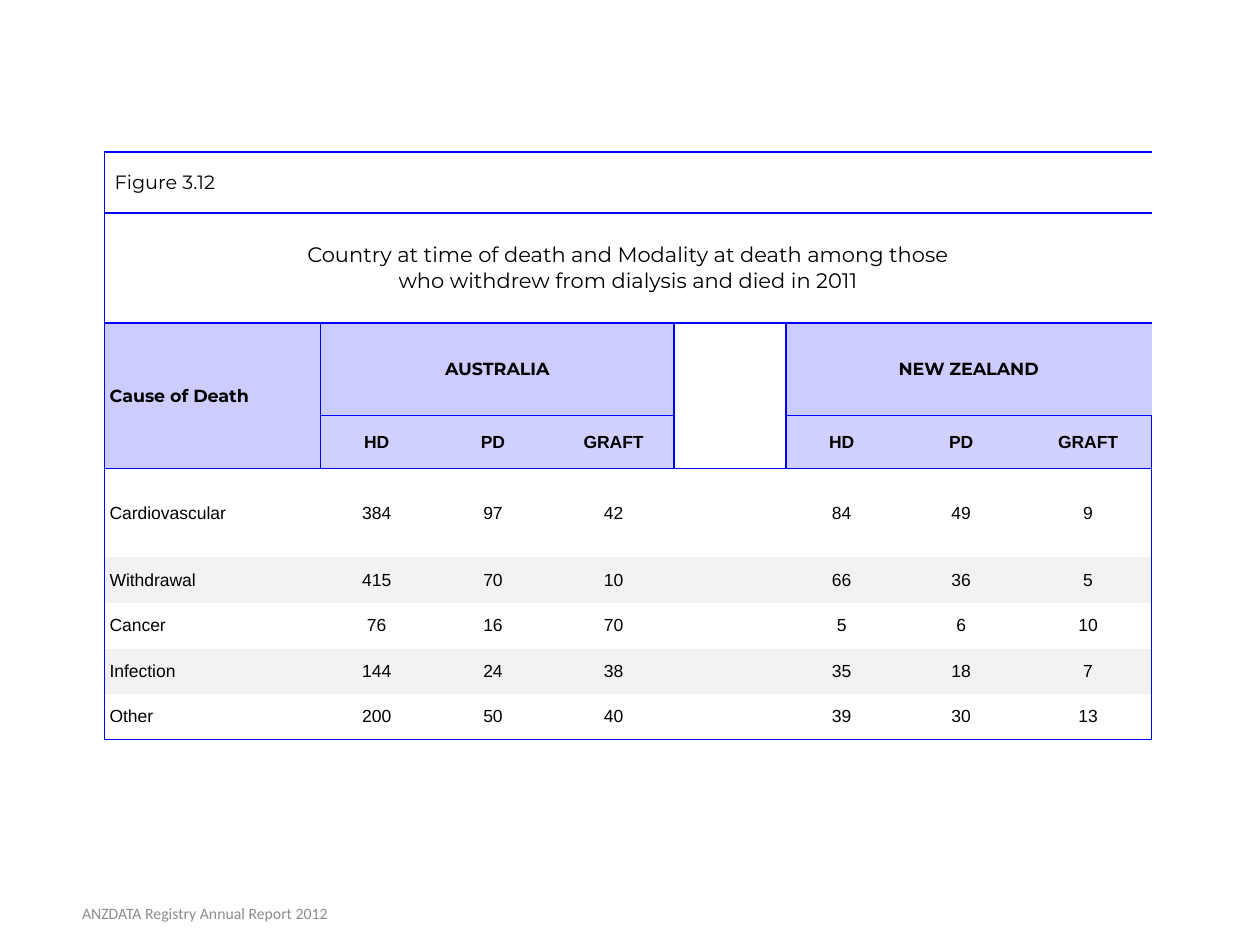
from lxml import etree
from pptx import Presentation
from pptx.dml.color import RGBColor
from pptx.enum.text import MSO_ANCHOR, PP_ALIGN
from pptx.oxml.ns import qn
from pptx.util import Inches, Pt

LEFT, CENTER = PP_ALIGN.LEFT, PP_ALIGN.CENTER
MIDDLE = MSO_ANCHOR.MIDDLE

BLACK = RGBColor(0x00, 0x00, 0x00)
WHITE = RGBColor(0xFF, 0xFF, 0xFF)
BLUE = RGBColor(0x00, 0x00, 0xFF)
LILAC = RGBColor(0xCC, 0xCC, 0xFF)
PALE_LILAC = RGBColor(0xD1, 0xD1, 0xFF)
STRIPE = RGBColor(0xF2, 0xF2, 0xF2)
GREY = RGBColor(0x8C, 0x8C, 0x8C)

# Relative sizes, scaled to the table's frame
COLUMNS = [1.72, 0.89, 0.96, 0.96, 0.89, 0.89, 1.01, 1.01]
ROWS = [0.48, 0.87, 0.73, 0.42, 0.7] + [0.36] * 4

# Outlined blocks: first row, first column, last row, last column
BLOCKS = [
    (0, 0, 0, 7), (1, 0, 1, 7),
    (2, 0, 3, 0), (2, 1, 2, 3), (2, 4, 3, 4), (2, 5, 2, 7),
    (3, 1, 3, 3), (3, 5, 3, 7),
    (4, 0, 8, 7),
]
MERGES = [BLOCKS[i] for i in (0, 1, 2, 3, 5)]

SUBTITLE = ("Country at time of death and Modality at death among those\n"
            "who withdrew from dialysis and died in 2011")
MODALITIES = ["HD", "PD", "GRAFT"]
COUNTRIES = {"AUSTRALIA": 1, "NEW ZEALAND": 5}
DEATHS = [
    ("Cardiovascular", (384, 97, 42), (84, 49, 9)),
    ("Withdrawal", (415, 70, 10), (66, 36, 5)),
    ("Cancer", (76, 16, 70), (5, 6, 10)),
    ("Infection", (144, 24, 38), (35, 18, 7)),
    ("Other", (200, 50, 40), (39, 30, 13)),
]


def write(tf, text, font="Arial", size=10, bold=False, color=BLACK, align=CENTER):
    """Write one paragraph for each line of the text."""
    for i, line in enumerate(text.split("\n")):
        p = tf.paragraphs[0] if i == 0 else tf.add_paragraph()
        p.alignment = align
        r = p.add_run()
        r.text = line
        r.font.name, r.font.size, r.font.bold = font, Pt(size), bold
        r.font.color.rgb = color


def set_borders(cell, row, col):
    """Draw the cell's sides that lie on the edge of its block."""
    top, left, bottom, right = next(
        b for b in BLOCKS if b[0] <= row <= b[2] and b[1] <= col <= b[3])
    sides = {"L": col == left, "R": col == right,
             "T": row == top, "B": row == bottom}
    # The body meets the header rows above it, so both share that edge.
    tcPr = cell._tc.get_or_add_tcPr()
    for side, drawn in sides.items():
        ln = etree.SubElement(tcPr, qn(f"a:ln{side}"), w=str(Pt(1)))
        if drawn:
            fill = etree.SubElement(ln, qn("a:solidFill"))
            etree.SubElement(fill, qn("a:srgbClr"), val=str(BLUE))
        else:
            etree.SubElement(ln, qn("a:noFill"))


class ReportSlide:
    """A slide whose elements are placed by shares of its size."""

    def __init__(self, prs):
        self.width, self.height = prs.slide_width, prs.slide_height
        self.s = prs.slides.add_slide(prs.slide_layouts[6])

    def frame(self, x, y, w, h):
        return (int(x * self.width), int(y * self.height),
                int(w * self.width), int(h * self.height))

    def text(self, text, box, **style):
        tf = self.s.shapes.add_textbox(*self.frame(*box)).text_frame
        tf.word_wrap = True
        tf.vertical_anchor = MIDDLE
        write(tf, text, **style)

    def table(self, box):
        x, y, w, h = self.frame(*box)
        table = self.s.shapes.add_table(len(ROWS), len(COLUMNS), x, y, w, h).table
        table.first_row = table.horz_banding = False
        for column, share in zip(table.columns, COLUMNS):
            column.width = int(w * share / sum(COLUMNS))
        for row, share in zip(table.rows, ROWS):
            row.height = int(h * share / sum(ROWS))
        for r in range(len(ROWS)):
            for c in range(len(COLUMNS)):
                cell = table.cell(r, c)
                cell.vertical_anchor = MIDDLE
                cell.margin_left = cell.margin_right = Inches(0.04)
                cell.margin_top = cell.margin_bottom = Inches(0.02)
                set_borders(cell, r, c)
                self.fill(cell, STRIPE if r in (5, 7) else WHITE)
        for top, left, bottom, right in MERGES:
            table.cell(top, left).merge(table.cell(bottom, right))
        return table

    def fill(self, cell, color):
        cell.fill.solid()
        cell.fill.fore_color.rgb = color

    def cell(self, table, row, col, text, fill=None, **style):
        cell = table.cell(row, col)
        if fill is not None:
            self.fill(cell, fill)
        write(cell.text_frame, text, **style)


def main():
    prs = Presentation()
    prs.slide_width, prs.slide_height = Inches(10), Inches(7.5)
    slide = ReportSlide(prs)

    table = slide.table((0.083, 0.161, 0.831, 0.622))
    table.cell(0, 0).margin_left = Inches(0.08)
    slide.cell(table, 0, 0, "Figure 3.12", font="Montserrat", size=11, align=LEFT)
    slide.cell(table, 1, 0, SUBTITLE, font="Montserrat", size=12)
    slide.cell(table, 2, 0, "Cause of Death", fill=LILAC, font="Montserrat",
               bold=True, align=LEFT)
    for country, first in COUNTRIES.items():
        slide.cell(table, 2, first, country, fill=LILAC, font="Montserrat", bold=True)
        for col, modality in enumerate(MODALITIES, first):
            slide.cell(table, 3, col, modality, fill=PALE_LILAC, bold=True)

    for row, (cause, *counts) in enumerate(DEATHS, 4):
        slide.cell(table, row, 0, cause, align=LEFT)
        for first, values in zip(COUNTRIES.values(), counts):
            for col, value in enumerate(values, first):
                slide.cell(table, row, col, str(value))

    slide.text("ANZDATA Registry Annual Report 2012", (0.004, 0.94, 0.317, 0.053),
               font="Calibri", size=9, color=GREY)
    prs.save("out.pptx")


if __name__ == "__main__":
    main()
